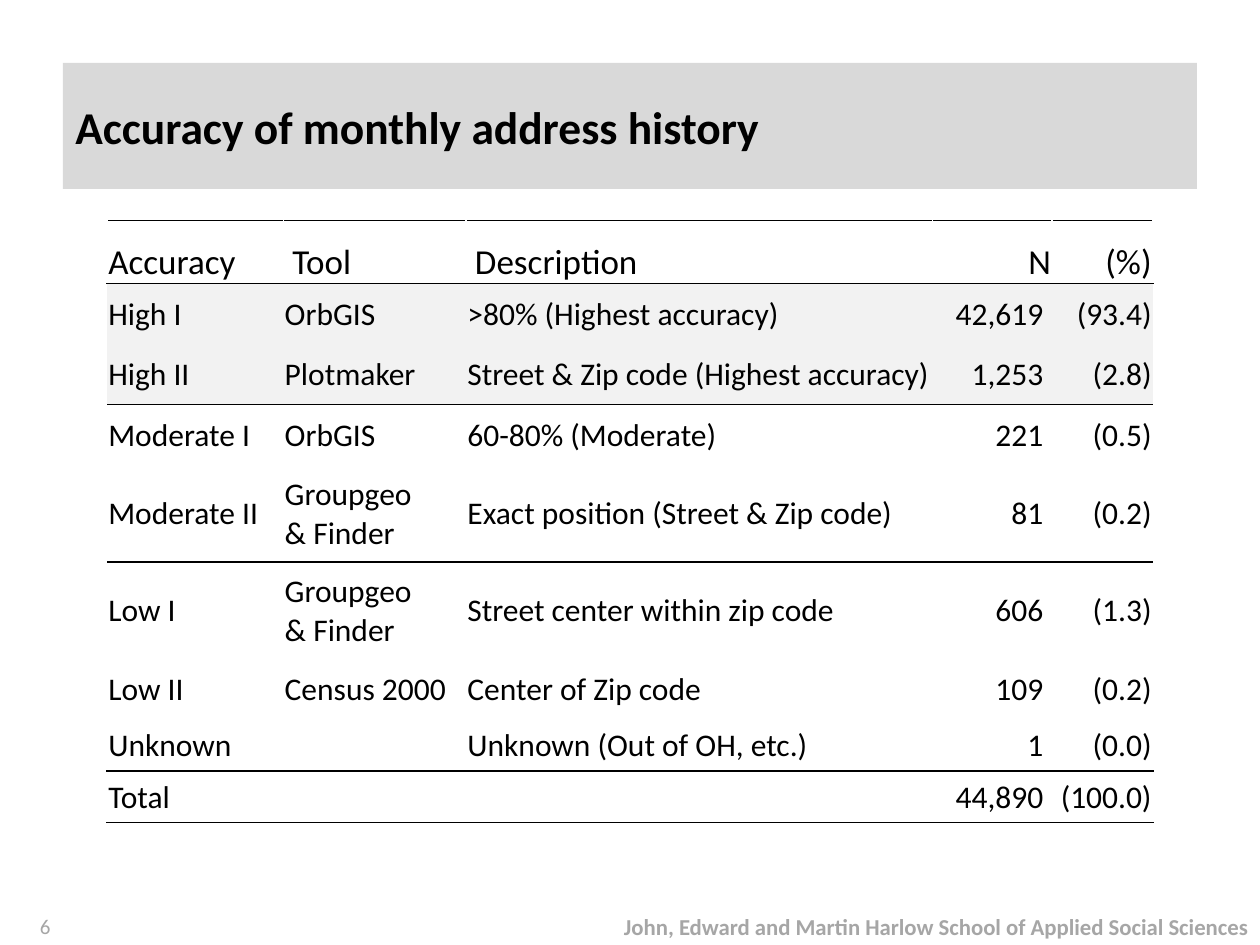
import pptx
import pptx.dml.color
import pptx.enum.shapes
import pptx.enum.text
import pptx.oxml
import pptx.oxml.ns
import pptx.util

LEFT = pptx.enum.text.PP_ALIGN.LEFT
RIGHT = pptx.enum.text.PP_ALIGN.RIGHT
MIDDLE = pptx.enum.text.MSO_ANCHOR.MIDDLE
BOTTOM = pptx.enum.text.MSO_ANCHOR.BOTTOM
NO_GRID_STYLE = "{2D5ABB26-0587-4C30-8999-92F81FD0307C}"


def color(hex_code):
    return pptx.dml.color.RGBColor.from_string(hex_code)


def write(frame, text, size=18, ink="000000", bold=False, align=LEFT):
    frame.text = text
    for paragraph in frame.paragraphs:
        paragraph.alignment = align
        paragraph.font.size = pptx.util.Pt(size)
        for run in paragraph.runs:
            run.font.name = "Calibri"
            run.font.size = pptx.util.Pt(size)
            run.font.bold = bold
            run.font.color.rgb = color(ink)


class Deck:
    step = 0.5
    muted = "A6A6A6"
    band = "D9D9D9"
    shade = "F2F2F2"
    rule = "000000"
    gap = "FFFFFF"

    def __init__(self):
        self.show = pptx.Presentation()
        self.show.slide_width = self.grid(20)
        self.show.slide_height = self.grid(15)
        self.slide = self.show.slides.add_slide(self.show.slide_layouts[6])

    def grid(self, count):
        return pptx.util.Inches(count * self.step)

    def place(self, *box):
        return [self.grid(count) for count in box]

    def title(self, text, *box):
        banner = self.slide.shapes.add_shape(
            pptx.enum.shapes.MSO_SHAPE.RECTANGLE, *self.place(*box))
        banner.shadow.inherit = False
        banner.fill.solid()
        banner.fill.fore_color.rgb = color(self.band)
        banner.line.fill.background()
        banner.text_frame.word_wrap = True
        banner.text_frame.vertical_anchor = MIDDLE
        write(banner.text_frame, text, size=26, bold=True)

    def footer(self, text, *box, **style):
        frame = self.slide.shapes.add_textbox(*self.place(*box)).text_frame
        frame.word_wrap = True
        frame.vertical_anchor = MIDDLE
        write(frame, text, ink=self.muted, align=RIGHT, **style)

    def borders(self, cell, edges):
        properties = cell._tc.get_or_add_tcPr()
        drawn = [side for side in "LRTB" if side in edges]
        for position, side in enumerate(drawn):
            properties.insert(position, pptx.oxml.parse_xml(
                f'<a:ln{side} {pptx.oxml.ns.nsdecls("a")} w="12700"><a:solidFill>'
                f'<a:srgbClr val="{edges[side]}"/></a:solidFill></a:ln{side}>'))

    def cell(self, cell, text, fill=None, edges=None, anchor=MIDDLE,
             left=0.01, right=0.01, **style):
        cell.margin_left = pptx.util.Inches(left)
        cell.margin_right = pptx.util.Inches(right)
        cell.margin_top = pptx.util.Inches(0.01)
        cell.margin_bottom = 0
        cell.vertical_anchor = anchor
        if fill:
            cell.fill.solid()
            cell.fill.fore_color.rgb = color(fill)
        else:
            cell.fill.background()
        self.borders(cell, edges or {})
        write(cell.text_frame, text, **style)

    def table(self, records, left, top, widths, heights):
        box = self.place(left, top, sum(widths), sum(heights))
        table = self.slide.shapes.add_table(
            len(records), len(widths), *box).table
        table.first_row = table.horz_banding = False
        table._tbl.tblPr.find(pptx.oxml.ns.qn("a:tableStyleId")).text = NO_GRID_STYLE
        for column, width in zip(table.columns, widths):
            column.width = self.grid(width)
        for row, height in zip(table.rows, heights):
            row.height = self.grid(height)
        return table

    def accuracy_table(self, records, *layout):
        table = self.table(records, *layout)
        sides = {"L": self.gap, "R": self.gap}
        below = {"B": self.rule}
        around = {**sides, **below, "T": self.rule}
        edges_by_level = {"Accuracy": around, "High II": below,
                          "Moderate II": below, "Unknown": {**sides, **below},
                          "Total": around}
        for r, record in enumerate(records):
            level = record[0]
            header = r == 0
            for c, text in enumerate(record):
                self.cell(
                    table.cell(r, c), text,
                    fill=self.shade if level.startswith("High") else None,
                    edges=edges_by_level.get(level),
                    anchor=BOTTOM if header else MIDDLE,
                    left=0.07 if header and c in (1, 2) else 0.01,
                    right=0.07 if not header and c == 3 else 0.01,
                    size=20 if header else 18,
                    align=RIGHT if c >= 3 else LEFT)


def main():
    records = [
        ("Accuracy", "Tool", "Description", "N", "(%)"),
        ("High I", "OrbGIS", ">80% (Highest accuracy)", "42,619", "(93.4)"),
        ("High II", "Plotmaker", "Street & Zip code (Highest accuracy)", "1,253", "(2.8)"),
        ("Moderate I", "OrbGIS", "60-80% (Moderate)", "221", "(0.5)"),
        ("Moderate II", "Groupgeo\n& Finder", "Exact position (Street & Zip code)", "81", "(0.2)"),
        ("Low I", "Groupgeo\n& Finder", "Street center within zip code", "606", "(1.3)"),
        ("Low II", "Census 2000", "Center of Zip code", "109", "(0.2)"),
        ("Unknown", "", "Unknown (Out of OH, etc.)", "1", "(0.0)"),
        ("Total", "", "", "44,890", "(100.0)"),
    ]
    widths = [2.8, 2.9, 7.4, 1.9, 1.6]
    heights = [1] + [0.96] * 3 + [1.54] * 2 + [0.96] + [0.82] * 2

    deck = Deck()
    deck.footer("John, Edward and Martin Harlow School of Applied Social Sciences",
                8, 14.4, 12, 0.6, size=13, bold=True)
    deck.footer("6", 0, 14.4, 1, 0.6, size=12)
    deck.title("Accuracy of monthly address history", 1, 1, 18, 2)
    deck.accuracy_table(records, 1.7, 3.5, widths, heights)
    deck.show.save("out.pptx")


if __name__ == "__main__":
    main()
